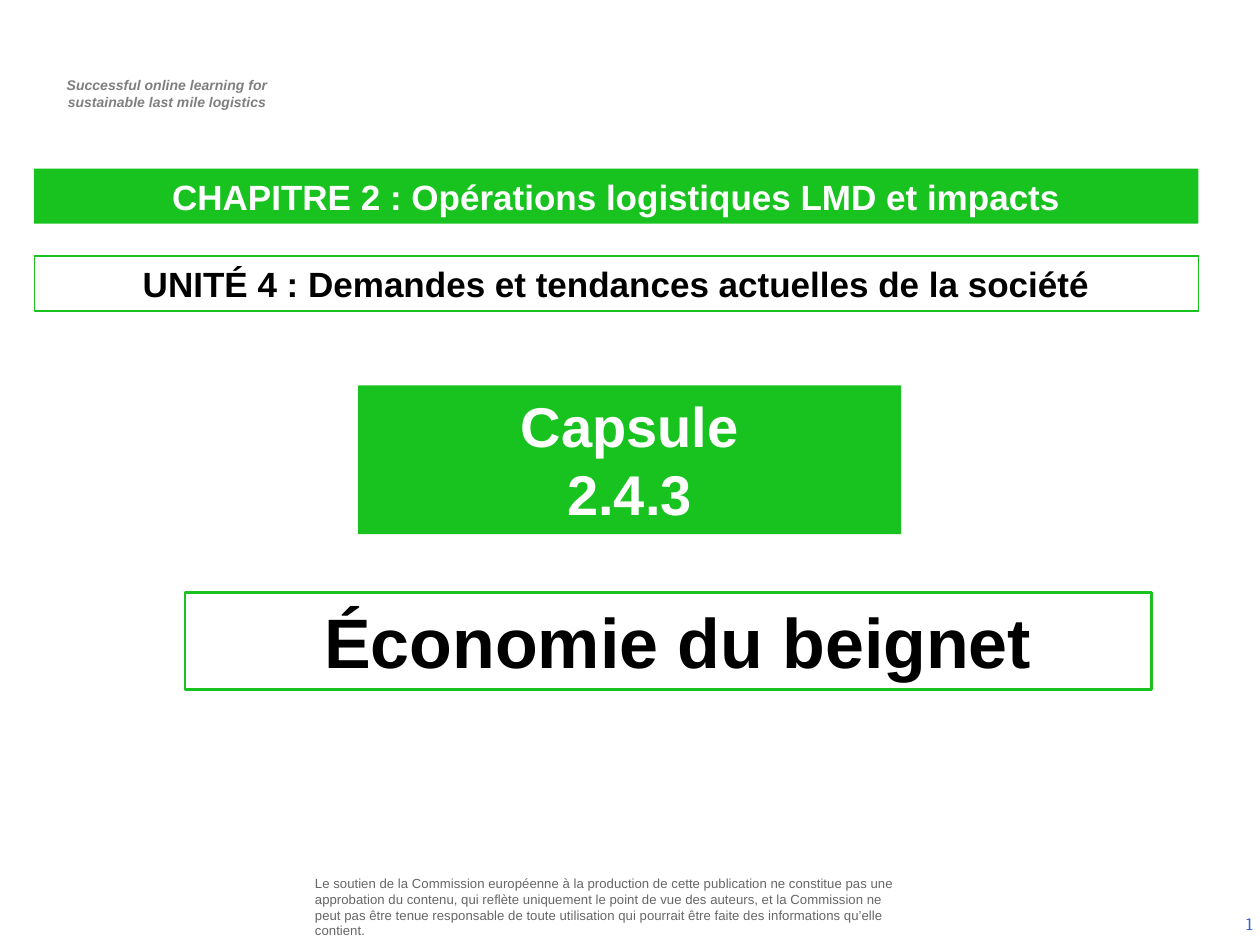
from dataclasses import dataclass
from typing import Optional

from lxml import etree
from pptx import Presentation
from pptx import util as u
from pptx.dml.color import RGBColor
from pptx.enum import shapes, text
from pptx.oxml import ns

GREEN = "18C320"
WHITE = "FFFFFF"
BLACK = "000000"


@dataclass
class Style:
    size: float
    color: str
    font: str = "Arial"
    bold: bool = False
    italic: bool = False
    align: text.PP_ALIGN = text.PP_ALIGN.CENTER
    anchor: text.MSO_ANCHOR = text.MSO_ANCHOR.TOP
    side_inset: float = 0.25
    edge_inset: float = 0.13


@dataclass
class Area:
    left: float
    top: float
    width: float
    height: float

    def lengths(self) -> list:
        return [u.Cm(n) for n in (self.left, self.top, self.width, self.height)]


@dataclass
class Banner:
    words: str
    area: Area
    style: Style
    fill: Optional[str] = None
    line_width: float = 0


def rgb(value: str) -> RGBColor:
    return RGBColor.from_string(value)


def write(box, words: str, style: Style) -> None:
    frame = box.text_frame
    frame.text = words
    frame.word_wrap = True
    frame.auto_size = text.MSO_AUTO_SIZE.NONE
    frame.vertical_anchor = style.anchor
    frame.margin_left = frame.margin_right = u.Cm(style.side_inset)
    frame.margin_top = frame.margin_bottom = u.Cm(style.edge_inset)
    for para in frame.paragraphs:
        para.alignment = style.align
        for span in para.runs:
            span.font.name = style.font
            span.font.size = u.Pt(style.size)
            span.font.bold = style.bold
            span.font.italic = style.italic
            span.font.color.rgb = rgb(style.color)


def add_label(page, words: str, area: Area, style: Style):
    box = page.shapes.add_textbox(*area.lengths())
    write(box, words, style)
    return box


def paint(box, fill: Optional[str], line_width: float) -> None:
    if fill:
        box.fill.solid()
        box.fill.fore_color.rgb = rgb(fill)
    else:
        box.fill.background()
    if line_width:
        box.line.color.rgb = rgb(GREEN)
        box.line.width = u.Pt(line_width)
    else:
        box.line.fill.background()


def add_banner(page, banner: Banner) -> None:
    box = page.shapes.add_shape(shapes.MSO_SHAPE.RECTANGLE, *banner.area.lengths())
    box.shadow.inherit = False
    paint(box, banner.fill, banner.line_width)
    write(box, banner.words, banner.style)


def set_title(page, banner: Banner) -> None:
    title = page.shapes.title
    title.left, title.top, title.width, title.height = banner.area.lengths()
    paint(title, banner.fill, banner.line_width)
    write(title, banner.words, banner.style)
    title.text_frame.margin_left = u.Cm(0.64)


def add_page_number(page, area: Area, style: Style) -> None:
    box = add_label(page, "1", area, style)
    span = box.text_frame.paragraphs[0].runs[0]._r
    field = etree.Element(
        ns.qn("a:fld"),
        id="{5B2D1C60-7A34-4E0B-9C11-3D6F0A8E2B41}",
        type="slidenum",
    )
    span.addprevious(field)
    field.extend(list(span))
    span.getparent().remove(span)


def main() -> None:
    deck = Presentation()
    deck.slide_width, deck.slide_height = u.Cm(25.4), u.Cm(19.05)
    page = deck.slides.add_slide(deck.slide_layouts[5])

    add_label(
        page,
        "Successful online learning for\nsustainable last mile logistics",
        Area(0.79, 1.42, 5.16, 0.94),
        Style(8, "7F7F7F", bold=True, italic=True),
    )
    add_label(
        page,
        "Le soutien de la Commission européenne à la production de cette "
        "publication ne constitue pas une approbation du contenu, qui reflète "
        "uniquement le point de vue des auteurs, et la Commission ne peut pas "
        "être tenue responsable de toute utilisation qui pourrait être faite "
        "des informations qu’elle contient.",
        Area(6.25, 17.65, 12.01, 1.27),
        Style(7.5, "666666", align=text.PP_ALIGN.LEFT,
              anchor=text.MSO_ANCHOR.MIDDLE, side_inset=0.1, edge_inset=0.1),
    )
    add_page_number(
        page,
        Area(19.58, 18.11, 5.92, 1.02),
        Style(10, "3366CC", font="Cambria", align=text.PP_ALIGN.RIGHT,
              anchor=text.MSO_ANCHOR.MIDDLE),
    )

    banners = [
        Banner("Capsule\n2.4.3", Area(7.22, 7.77, 10.95, 3),
               Style(32, WHITE, bold=True), fill=GREEN),
        Banner("CHAPITRE 2 : Opérations logistiques LMD et impacts",
               Area(0.69, 3.4, 23.47, 1.11),
               Style(20, WHITE, bold=True), fill=GREEN),
        Banner("UNITÉ 4 : Demandes et tendances actuelles de la société",
               Area(0.69, 5.16, 23.47, 1.11),
               Style(20, BLACK, bold=True), line_width=0.75),
    ]
    for banner in banners:
        add_banner(page, banner)
    set_title(page, Banner("Économie du beignet", Area(3.73, 11.94, 19.48, 1.96),
                           Style(40, BLACK, bold=True), line_width=1.5))

    deck.save("out.pptx")


if __name__ == "__main__":
    main()
